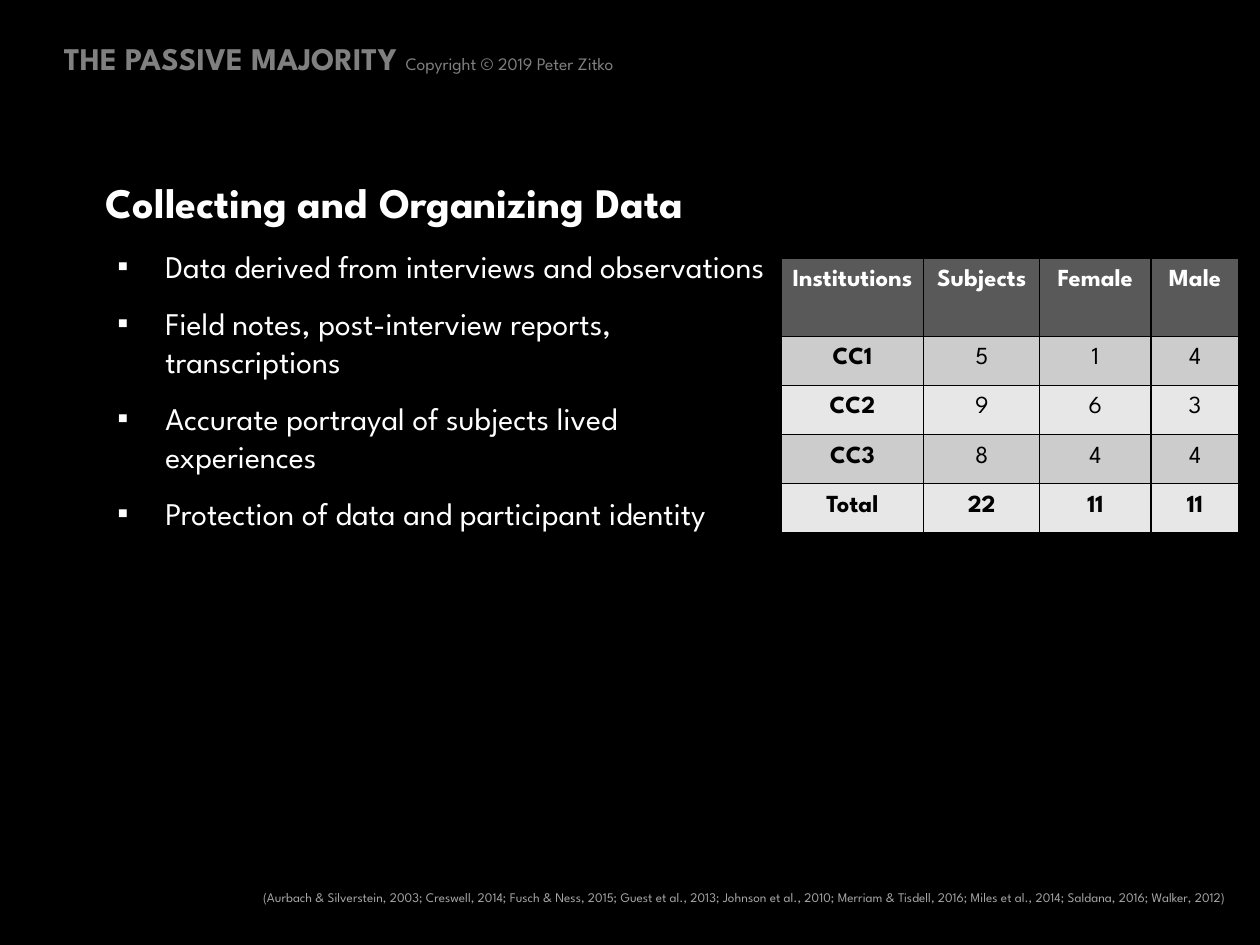
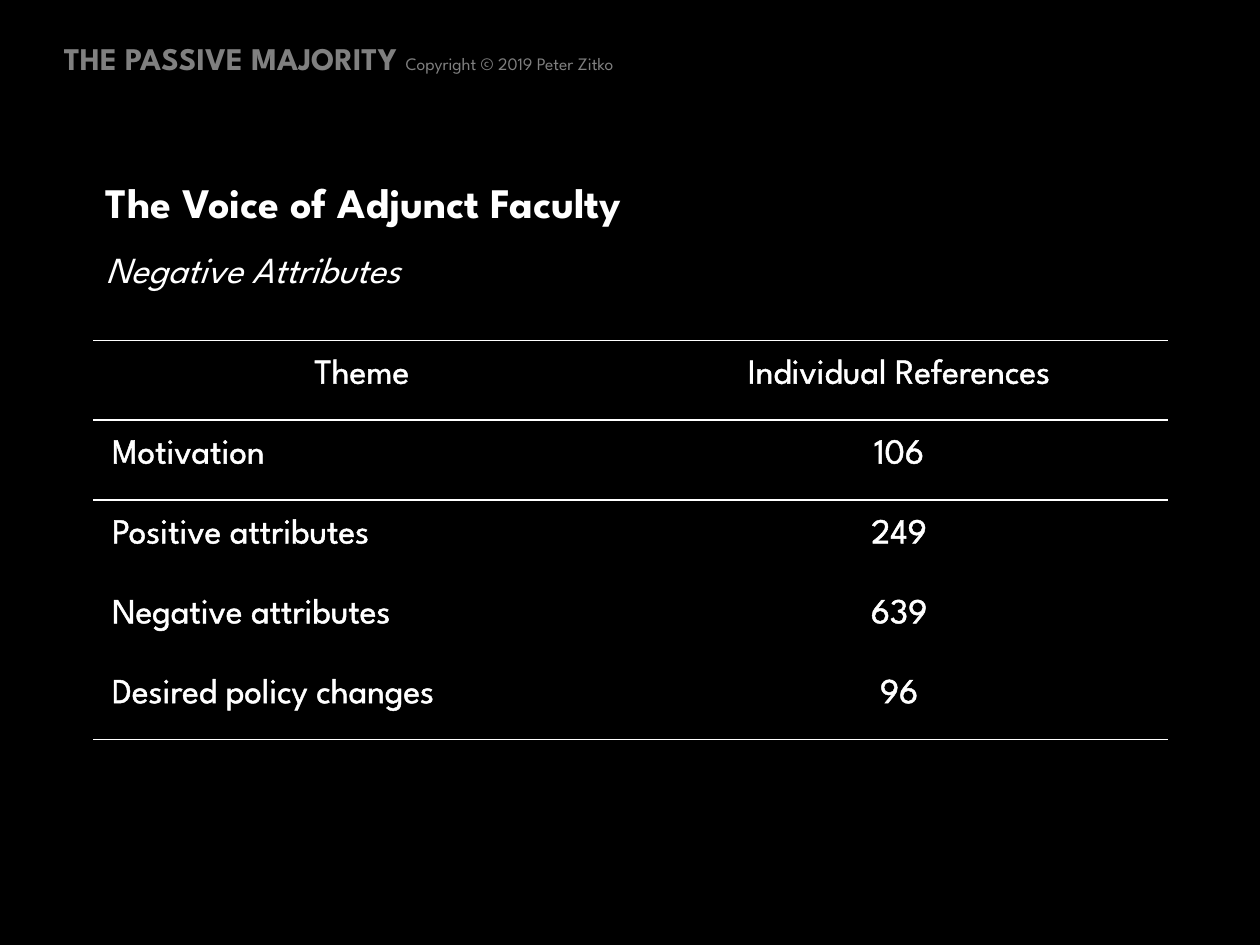
"""Build two slides on data collection and adjunct faculty themes."""
import dataclasses

import pptx
import pptx.dml.color
import pptx.enum.text
import pptx.oxml
import pptx.oxml.ns
import pptx.util
from pptx.util import Cm, Pt

ALIGN = pptx.enum.text.PP_ALIGN
qn = pptx.oxml.ns.qn


@dataclasses.dataclass(frozen=True)
class Theme:
    font: str = "League Spartan"
    back: str = "000000"
    text: str = "FFFFFF"
    muted: str = "808080"
    source: str = "A6A6A6"
    head_fill: str = "595959"
    bands: tuple = ("CCCCCC", "E7E7E7")
    title_size: float = 24
    subtitle_size: float = 21
    theme_size: float = 20
    body_size: float = 18
    table_size: float = 14
    small_size: float = 10
    source_size: float = 7.5


THEME = Theme()
NO_STYLE = "{2D5ABB26-0587-4C30-8999-92F81FD0307C}"
LEFT, TITLE_TOP, BODY_TOP, FULL_WIDTH = 1.88, 3.43, 4.85, 21.66

BRAND = ("THE PASSIVE MAJORITY ", "Copyright © 2019 Peter Zitko")
COLLECTING = {
    "title": "Collecting and Organizing Data",
    "bullets": [
        "Data derived from interviews and observations",
        "Field notes, post-interview reports, transcriptions",
        "Accurate portrayal of subjects lived experiences",
        "Protection of data and participant identity",
    ],
    "rows": [
        ("Institutions", "Subjects", "Female", "Male"),
        ("CC1", 5, 1, 4),
        ("CC2", 9, 6, 3),
        ("CC3", 8, 4, 4),
        ("Total", 22, 11, 11),
    ],
    "source": "(Aurbach & Silverstein, 2003; Creswell, 2014; Fusch & Ness, 2015; "
              "Guest et al., 2013; Johnson et al., 2010; Merriam & Tisdell, 2016; "
              "Miles et al., 2014; Saldana, 2016; Walker, 2012)",
}
VOICE = {
    "title": "The Voice of Adjunct Faculty",
    "subtitle": "Negative Attributes",
    "rows": [
        ("Theme", "Individual References"),
        ("Motivation", 106),
        ("Positive attributes", 249),
        ("Negative attributes", 639),
        ("Desired policy changes", 96),
    ],
}


def rgb(color):
    return pptx.dml.color.RGBColor.from_string(color)


def xml(tag, inner="", attrs=""):
    return pptx.oxml.parse_xml(
        f'<a:{tag} {pptx.oxml.ns.nsdecls("a")} {attrs}>{inner}</a:{tag}>')


def line_xml(tag, color, width):
    fill = f'<a:solidFill><a:srgbClr val="{color}"/></a:solidFill>'
    return xml(tag, fill, f'w="{Pt(width)}"')


def style(r, size, color=THEME.text, bold=False, italic=False):
    r.font.name, r.font.size = THEME.font, Pt(size)
    r.font.bold, r.font.italic = bold, italic
    r.font.color.rgb = rgb(color)


def place(sp, left, top, width, height):
    sp.left, sp.top, sp.width, sp.height = map(Cm, (left, top, width, height))
    tf = sp.text_frame
    tf.word_wrap = True
    tf.auto_size = pptx.enum.text.MSO_AUTO_SIZE.NONE
    tf.vertical_anchor = pptx.enum.text.MSO_ANCHOR.TOP
    return tf


def add_text_box(s, left, top, width, height):
    return place(s.shapes.add_textbox(0, 0, 0, 0), left, top, width, height)


def add_slide(prs, title):
    s = prs.slides.add_slide(prs.slide_layouts[1])
    p = add_text_box(s, 1.04, 0.66, 20.27, 1.12).paragraphs[0]
    for text, size, bold in zip(BRAND, (THEME.body_size, THEME.small_size), (True, False)):
        r = p.add_run()
        r.text = text
        style(r, size, THEME.muted, bold)
    tf = place(s.shapes.title, LEFT, TITLE_TOP, FULL_WIDTH, 1.27)
    tf.text = title
    tf.paragraphs[0].alignment = ALIGN.LEFT
    style(tf.paragraphs[0].runs[0], THEME.title_size, bold=True)
    return s


def fill_body(s, lines, width, height, size, bullet=None, italic=False):
    tf = place(s.placeholders[1], LEFT, BODY_TOP, width, height)
    tf.text = "\n".join(lines)
    for i, p in enumerate(tf.paragraphs):
        p.space_before = Pt(11 if i else 0)
        pPr = p._p.get_or_add_pPr()
        pPr.set("marL", str(Cm(1.2) if bullet else 0))
        pPr.set("indent", str(Cm(-0.97) if bullet else 0))
        pPr.append(xml("buChar", attrs=f'char="{bullet}"') if bullet else xml("buNone"))
        style(p.runs[0], size, italic=italic)


def add_grid(s, rows, left, top, widths, heights, margins):
    frame = s.shapes.add_table(len(rows), len(widths), Cm(left), Cm(top),
                               Cm(sum(widths)), Cm(sum(heights)))
    table = frame.table
    table.first_row = table.horz_banding = False
    table._tbl.tblPr.find(qn("a:tableStyleId")).text = NO_STYLE
    for col, width in zip(table.columns, widths):
        col.width = Cm(width)
    for row, height in zip(table.rows, heights):
        row.height = Cm(height)
    for i, values in enumerate(rows):
        for j, value in enumerate(values):
            cell = table.cell(i, j)
            (cell.margin_left, cell.margin_top,
             cell.margin_right, cell.margin_bottom) = map(Cm, margins)
            cell.text = str(value)
            yield i, j, cell, cell.text_frame.paragraphs[0]


def add_borders(cell, sides, color):
    tcPr = cell._tc.get_or_add_tcPr()
    for side in sides:
        tcPr.append(line_xml(f"ln{side}", color, 1))


def build_collecting(prs):
    s = add_slide(prs, COLLECTING["title"])
    fill_body(s, COLLECTING["bullets"], 13.87, 7.5, THEME.body_size, bullet="▪")
    rows = COLLECTING["rows"]
    for i, j, cell, p in add_grid(s, rows, 15.75, 5.21, (2.87, 2.34, 2.24, 1.78),
                                  [1.57] + [0.99] * 4, (0.15, 0, 0.15, 0.13)):
        add_borders(cell, "LRTB", THEME.back)
        cell.fill.solid()
        cell.fill.fore_color.rgb = rgb(THEME.bands[(i - 1) % 2] if i else THEME.head_fill)
        p.alignment, p.line_spacing = ALIGN.CENTER, 1.5
        style(p.runs[0], THEME.table_size, THEME.back if i else THEME.text,
              bold=j == 0 or i in (0, len(rows) - 1))
    p = add_text_box(s, 2.13, 17.81, 22.83, 0.58).paragraphs[0]
    p.text = COLLECTING["source"]
    p.alignment = ALIGN.RIGHT
    style(p.runs[0], THEME.source_size, THEME.source)


def build_voice(prs):
    s = add_slide(prs, VOICE["title"])
    fill_body(s, [VOICE["subtitle"]], FULL_WIDTH, 1.2, THEME.subtitle_size, italic=True)
    rows = VOICE["rows"]
    borders = {0: "TB", 1: "T", len(rows) - 1: "B"}
    for i, j, cell, p in add_grid(s, rows, LEFT, 6.86, [FULL_WIDTH / 2] * 2,
                                  [1.61] * len(rows), [0.38] * 4):
        add_borders(cell, borders.get(i, ""), THEME.text)
        cell.fill.background()
        p.alignment = ALIGN.LEFT if i and j == 0 else ALIGN.CENTER
        r = p.runs[0]
        style(r, THEME.theme_size)
        r._r.get_or_add_rPr().insert(0, line_xml("ln", THEME.text, 0.75))


def main():
    prs = pptx.Presentation()
    prs.slide_width, prs.slide_height = Cm(25.4), Cm(19.05)
    fill = prs.slide_master.background.fill
    fill.solid()
    fill.fore_color.rgb = rgb(THEME.back)
    build_collecting(prs)
    build_voice(prs)
    prs.save("out.pptx")


if __name__ == "__main__":
    main()
